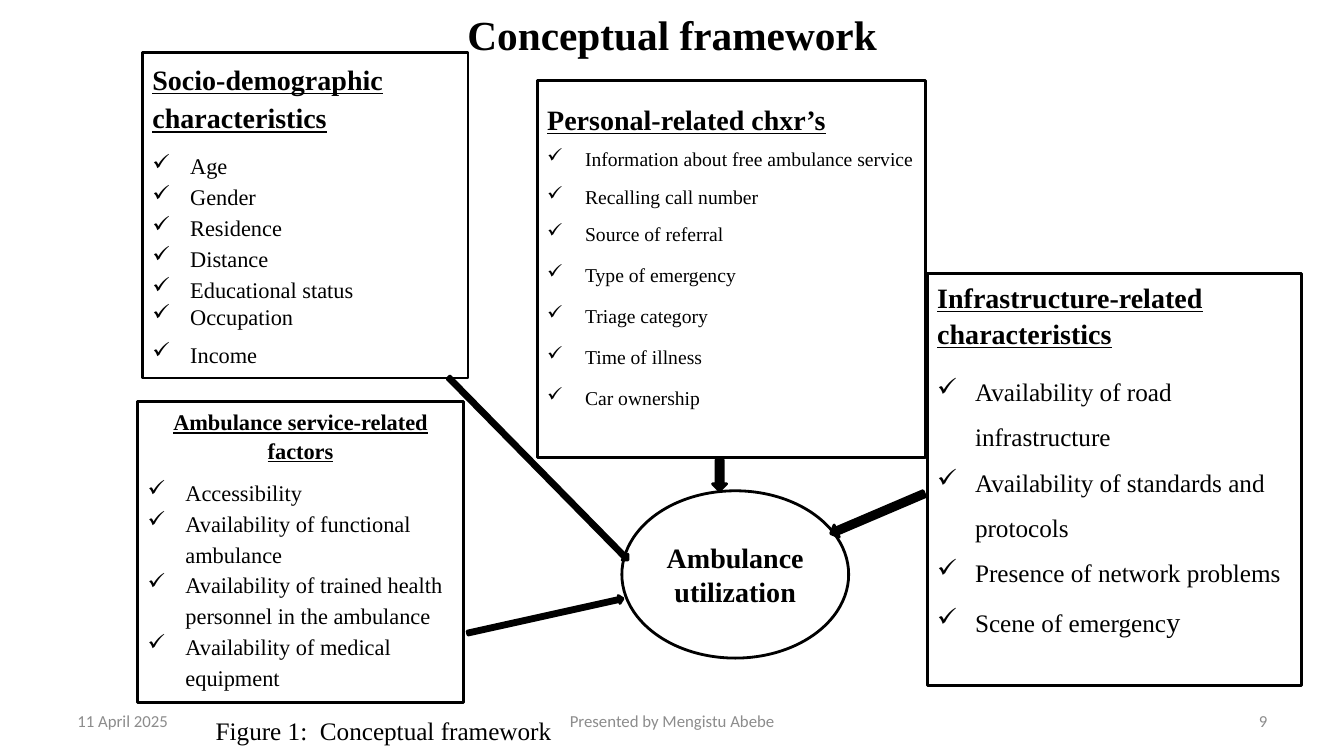
from pptx import Presentation
from pptx.dml.color import RGBColor
from pptx.enum.shapes import MSO_SHAPE
from pptx.enum.text import MSO_ANCHOR, MSO_AUTO_SIZE, PP_ALIGN
from pptx.oxml.ns import qn
from pptx.util import Pt
from lxml.etree import SubElement

SERIF = "Times New Roman"
BLACK, WHITE, GREY = "000000", "FFFFFF", "8C8C8C"
LEFT, CENTER, RIGHT = PP_ALIGN.LEFT, PP_ALIGN.CENTER, PP_ALIGN.RIGHT
INDENT = 27


def color(value):
    return RGBColor.from_string(value)


def add_run(p, text, size=18, font=SERIF, fill=BLACK, bold=False, underline=False):
    r = p.add_run()
    r.text = text
    r.font.size = Pt(size)
    r.font.name = font
    r.font.color.rgb = color(fill)
    r.font.bold = bold
    r.font.underline = underline


def add_text(tf, text, align=LEFT, spacing=1.0, after=0, bullet=False, **style):
    p = tf.paragraphs[0]
    if p.runs:
        p = tf.add_paragraph()
    p.alignment = align
    p.line_spacing = spacing
    p.space_before = Pt(0)
    p.space_after = Pt(after)
    if bullet:
        pPr = p._p.get_or_add_pPr()
        pPr.set("marL", str(Pt(INDENT)))
        pPr.set("indent", str(-Pt(INDENT)))
        SubElement(pPr, qn("a:buChar")).set("char", "✓")
    add_run(p, text, **style)
    return p


def add_shape(s, kind, x, y, w, h, fill=WHITE, rotation=0):
    sp = s.shapes.add_shape(kind, Pt(x), Pt(y), Pt(w), Pt(h))
    sp.shadow.inherit = False
    sp.fill.solid()
    sp.fill.fore_color.rgb = color(fill)
    sp.line.color.rgb = color(BLACK)
    sp.line.width = Pt(2)
    sp.rotation = rotation
    return sp


def add_factor_box(s, x, y, w, h, heading, heading_style, items, size):
    tf = add_shape(s, MSO_SHAPE.RECTANGLE, x, y, w, h).text_frame
    tf.vertical_anchor = MSO_ANCHOR.TOP
    add_text(tf, heading, bold=True, underline=True, **heading_style)
    for text, spacing, after in items:
        p = add_text(tf, text, spacing=spacing, after=after, bullet=True, size=size)
    return p


def add_label(s, x, y, w, h, text, **style):
    tf = s.shapes.add_textbox(Pt(x), Pt(y), Pt(w), Pt(h)).text_frame
    tf.word_wrap = True
    tf.vertical_anchor = MSO_ANCHOR.MIDDLE
    add_text(tf, text, **style)


def add_title(s, text):
    sp = s.shapes.title
    sp.left, sp.top, sp.width, sp.height = Pt(156.2), Pt(11.5), Pt(648), Pt(26)
    tf = sp.text_frame
    tf.auto_size = MSO_AUTO_SIZE.NONE
    tf.vertical_anchor = MSO_ANCHOR.MIDDLE
    add_text(tf, text, align=CENTER, size=29.5, bold=True)


def main():
    prs = Presentation()
    prs.slide_width, prs.slide_height = Pt(960), Pt(540)
    s = prs.slides.add_slide(prs.slide_layouts[5])
    add_title(s, "Conceptual framework")

    personal = ["Information about free ambulance service", "Recalling call number",
                "Source of referral"]
    personal_wide = ["Type of emergency", "Triage category", "Time of illness",
                     "Car ownership"]
    add_factor_box(s, 383.8, 57.6, 277.5, 269.3, "Personal-related chxr’s",
                   dict(size=20, spacing=1.5, after=8),
                   [(t, 1.0, 10) for t in personal]
                   + [(t, 1.15, 10) for t in personal_wide], 14)

    social = ["Age", "Gender", "Residence", "Distance", "Educational status"]
    add_factor_box(s, 101.8, 37.4, 232.6, 232.6, "Socio-demographic characteristics",
                   dict(size=20, spacing=1.15, after=10),
                   [(t, 1.15, 0) for t in social]
                   + [(t, 1.0, 8) for t in ["Occupation", "Income"]], 16)

    infrastructure = ["Availability of road infrastructure",
                      "Availability of standards and protocols",
                      "Presence of network problems"]
    last = add_factor_box(s, 662.4, 195.1, 267.3, 294.5,
                          "Infrastructure-related characteristics",
                          dict(size=20, spacing=1.07, after=8),
                          [(t, 1.5, 0) for t in infrastructure]
                          + [("Scene of emergenc", 1.5, 8)], 18)
    add_run(last, "y", size=20)

    service = ["Accessibility", "Availability of functional ambulance",
               "Availability of trained health personnel in the ambulance",
               "Availability of medical equipment"]
    add_factor_box(s, 98.4, 286.6, 232.6, 215.3, "Ambulance service-related factors",
                   dict(size=16, spacing=1.07, after=8, align=CENTER),
                   [(t, 1.15, 0) for t in service], 16)

    outcome = add_shape(s, MSO_SHAPE.OVAL, 444.2, 350.6, 162, 119.5).text_frame
    outcome.vertical_anchor = MSO_ANCHOR.MIDDLE
    add_text(outcome, "Ambulance utilization", align=CENTER, size=20, bold=True)

    for kind, x, y, w, h, rotation in [
        (MSO_SHAPE.DOWN_ARROW, 509, 328.3, 10.1, 22.3, 0),
        (MSO_SHAPE.RIGHT_ARROW, 293, 331.9, 182.9, 5.8, 45.5),
        (MSO_SHAPE.LEFT_ARROW, 590.4, 362.2, 72.7, 9.4, 336.9),
        (MSO_SHAPE.DOWN_ARROW, 386.6, 383, 5.8, 113.8, 257.5),
    ]:
        add_shape(s, kind, x, y, w, h, fill=BLACK, rotation=rotation)

    for x, w, text, align in [(48.2, 224, "11 April 2025", LEFT),
                              (328.3, 303.8, "Presented by Mengistu Abebe", CENTER),
                              (688.3, 224, "9", RIGHT)]:
        add_label(s, x, 500.4, w, 28.8, text, align=align, size=12,
                  font="Calibri", fill=GREY)
    add_label(s, 147, 507, 260, 30, "Figure 1:  Conceptual framework", size=18)

    prs.save("out.pptx")


if __name__ == "__main__":
    main()
